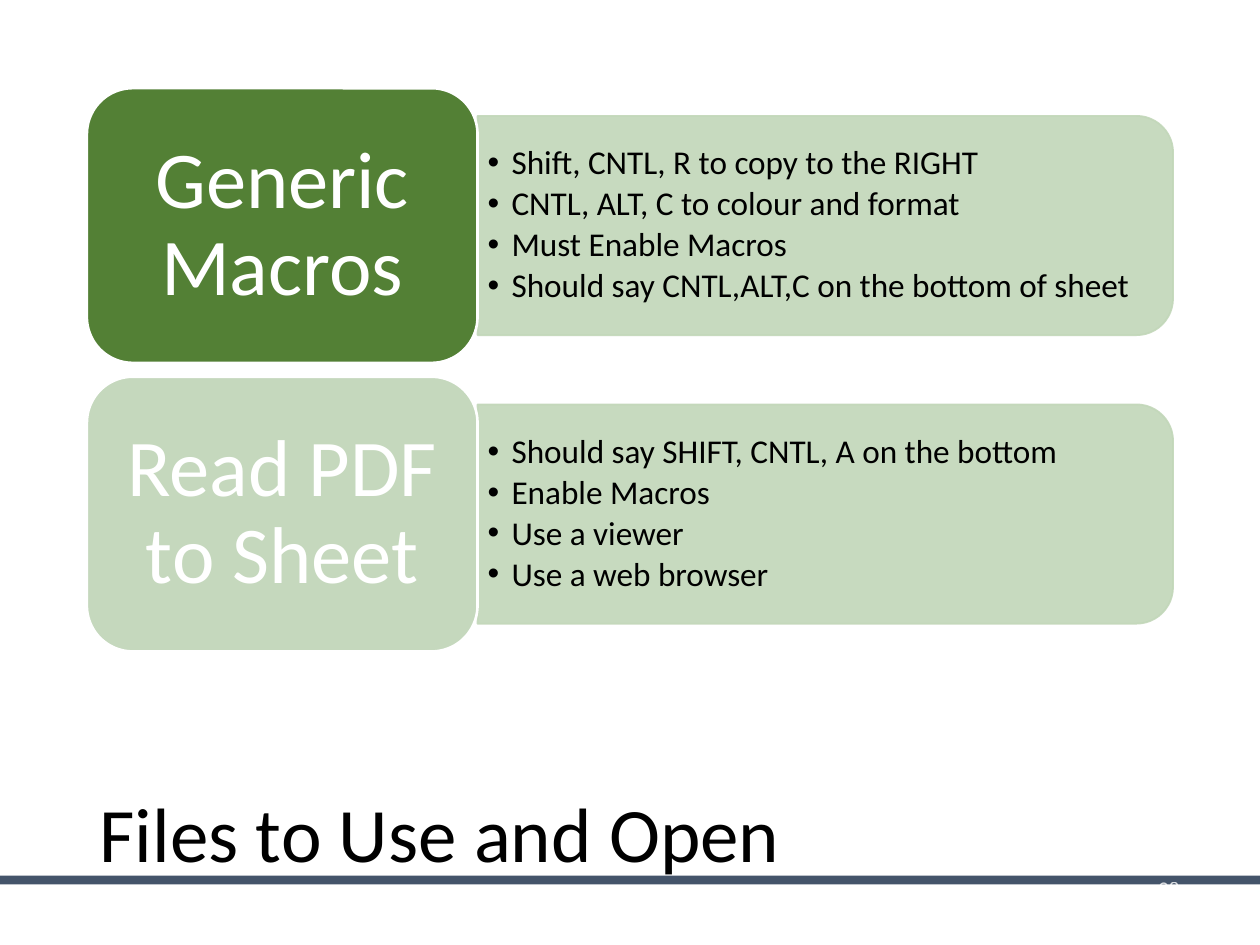
from lxml import etree
from pptx import Presentation
from pptx.dml.color import RGBColor
from pptx.enum import shapes, text
from pptx.oxml.ns import qn
from pptx.util import Inches, Pt

COLOURS = {
    "bar": "44546A", "panel": "C2D7B9", "strong": "538035",
    "pale": "C5D8BD", "white": "FFFFFF", "black": "000000",
}
WIDTH, HEIGHT = 10, 7.5

# Grid: a label column, a panel column and two equal rows
LEFT, LABEL_WIDTH, PANEL_WIDTH = 0.69, 3.1, 5.52
PANEL_LEFT = LEFT + LABEL_WIDTH
TOP, LABEL_HEIGHT, PANEL_HEIGHT = 0.7, 2.18, 1.74
ROW_PITCH = 2.29

TOPICS = [
    ("Generic Macros", "strong", [
        "Shift, CNTL, R to copy to the RIGHT",
        "CNTL, ALT, C to colour and format",
        "Must Enable Macros",
        "Should say CNTL,ALT,C on the bottom of sheet",
    ]),
    ("Read PDF to Sheet", "pale", [
        "Should say SHIFT, CNTL, A on the bottom",
        "Enable Macros",
        "Use a viewer",
        "Use a web browser",
    ]),
]


def colour(name):
    return RGBColor.from_string(COLOURS[name])


def place(box, left, top, width, height):
    box.left, box.top = Inches(left), Inches(top)
    box.width, box.height = Inches(width), Inches(height)


def bring_to_front(page, box):
    page.shapes._spTree.append(box._element)


def set_alpha(fill_parent, percent):
    for tint in fill_parent.iter(qn("a:srgbClr")):
        etree.SubElement(tint, qn("a:alpha"), val=str(percent * 1000))


def set_frame(box, side=0.1, end=0.05):
    frame = box.text_frame
    frame.word_wrap = True
    frame.auto_size = text.MSO_AUTO_SIZE.NONE
    frame.vertical_anchor = text.MSO_ANCHOR.MIDDLE
    frame.margin_left = frame.margin_right = Inches(side)
    frame.margin_top = frame.margin_bottom = Inches(end)
    return frame


def style(para, size, name, align=text.PP_ALIGN.LEFT, spacing=0.9):
    para.alignment = align
    para.line_spacing = spacing
    para.space_before = Pt(0)
    para.font.size = Pt(size)
    para.font.name = "Calibri"
    para.font.color.rgb = colour(name)


def add_block(page, kind, area, fill, line=None, weight=1):
    block = page.shapes.add_shape(kind, *(Inches(n) for n in area))
    block.shadow.inherit = False
    block.fill.solid()
    block.fill.fore_color.rgb = colour(fill)
    if line:
        block.line.color.rgb = colour(line)
        block.line.width = Pt(weight)
    else:
        block.line.fill.background()
    return block


def add_panel(page, middle):
    # A quarter turn puts the two rounded corners on the right
    left = PANEL_LEFT + (PANEL_WIDTH - PANEL_HEIGHT) / 2
    area = (left, middle - PANEL_WIDTH / 2, PANEL_HEIGHT, PANEL_WIDTH)
    panel = add_block(page, shapes.MSO_SHAPE.ROUND_2_SAME_RECTANGLE,
                      area, "panel", "panel")
    panel.rotation = 90
    set_alpha(panel._element.spPr, 90)


def fill_list(page, box, middle, items):
    place(box, PANEL_LEFT, middle - 1.57 / 2, 5.43, 1.57)
    bring_to_front(page, box)
    frame = set_frame(box, 0.08, 0.04)
    for index, item in enumerate(items):
        para = frame.add_paragraph() if index else frame.paragraphs[0]
        para.text = item
        properties = para._p.get_or_add_pPr()
        indent = Inches(0.19)
        properties.set("marL", str(indent))
        properties.set("indent", str(-indent))
        etree.SubElement(properties, qn("a:buFont"), typeface="Arial")
        etree.SubElement(properties, qn("a:buChar"), char="•")
        style(para, 19, "black")
        para.space_after = Pt(2.85)


def add_label(page, top, wording, fill):
    label = add_block(page, shapes.MSO_SHAPE.ROUNDED_RECTANGLE,
                      (LEFT, top, LABEL_WIDTH, LABEL_HEIGHT),
                      fill, "white", 1.5)
    para = set_frame(label, 0.19, 0.1).paragraphs[0]
    para.text = wording
    style(para, 46, "white", text.PP_ALIGN.CENTER)


def fill_title(page, wording):
    title = page.shapes.title
    place(title, LEFT, 6.05, 6.33, 1.2)
    bring_to_front(page, title)
    para = set_frame(title).paragraphs[0]
    para.text = wording
    style(para, 44, "black")


def add_page_number(page, number):
    box = page.shapes.add_textbox(*(Inches(n) for n in (8.36, 6.85, 1.1, 0.4)))
    para = set_frame(box).paragraphs[0]
    para.text = number
    style(para, 12, "white", text.PP_ALIGN.RIGHT, 1.0)
    para.space_after = Pt(6)
    set_alpha(para._p, 80)


def main():
    deck = Presentation()
    deck.slide_width, deck.slide_height = Inches(WIDTH), Inches(HEIGHT)
    page = deck.slides.add_slide(deck.slide_layouts[3])
    lists = [box for box in page.placeholders if box.placeholder_format.idx]

    # Footer bar
    add_block(page, shapes.MSO_SHAPE.RECTANGLE, (0, 6.95, WIDTH, 0.07), "bar")

    # Topic rows
    for row, (wording, fill, items) in enumerate(TOPICS):
        top = TOP + row * ROW_PITCH
        middle = top + LABEL_HEIGHT / 2
        add_panel(page, middle)
        fill_list(page, lists[row], middle, items)
        add_label(page, top, wording, fill)

    # Title and page number
    fill_title(page, "Files to Use and Open")
    add_page_number(page, "38")
    deck.save("out.pptx")


if __name__ == "__main__":
    main()
